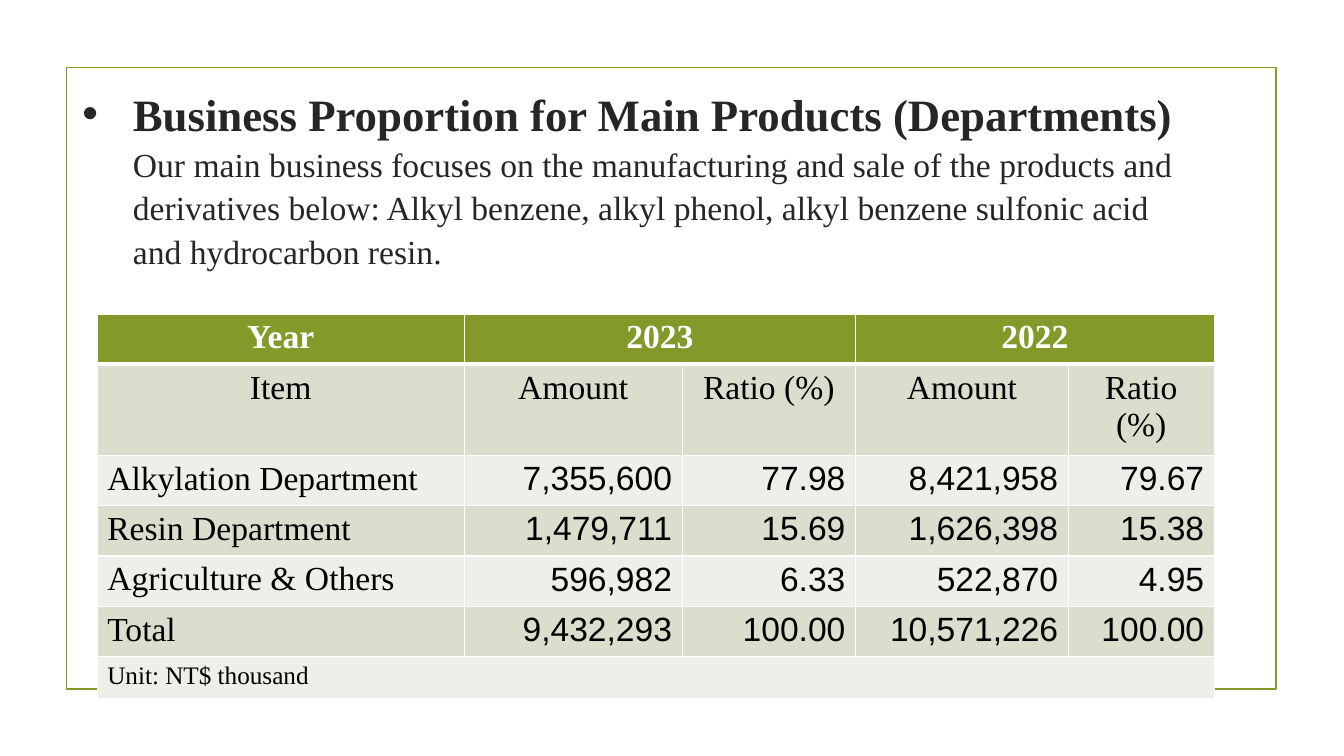
from lxml.etree import SubElement
from pptx import Presentation
from pptx.dml.color import RGBColor
from pptx.enum.shapes import MSO_SHAPE as Shape
from pptx.enum.text import MSO_ANCHOR as Anchor, PP_ALIGN as Align
from pptx.oxml.ns import qn
from pptx.util import Cm, Pt

SERIF, SANS = "Times New Roman", "Arial"
GREEN, WHITE = "83992A", "FFFFFF"


def tint(code):
    return RGBColor.from_string(code)


def put(para, text, size=24, font=SERIF, color="000000", bold=False, align=None):
    run = para.add_run()
    run.text = text
    run.font.size = Pt(size)
    run.font.name = font
    run.font.bold = bold
    run.font.color.rgb = tint(color)
    if align is not None:
        para.alignment = align


deck = Presentation()
deck.slide_width, deck.slide_height = Cm(33.87), Cm(19.05)
slide = deck.slides.add_slide(deck.slide_layouts[6])

# Frame
frame = slide.shapes.add_shape(Shape.RECTANGLE, Cm(1.68), Cm(1.7), Cm(30.48), Cm(15.67))
frame.shadow.inherit = False
frame.fill.background()
frame.line.color.rgb = tint(GREEN)
frame.line.width = Pt(1.25)

# Heading and introduction
box = slide.shapes.add_textbox(Cm(1.83), Cm(0.97), Cm(28.78), Cm(6.96))
frame = box.text_frame
frame.word_wrap = True
frame.vertical_anchor = Anchor.MIDDLE
para = frame.paragraphs[0]
para.line_spacing = 1.08
props = para._p.get_or_add_pPr()
props.set("marL", str(Cm(1.27)))
props.set("indent", str(-Cm(1.27)))
SubElement(props, qn("a:buFont"), typeface=SANS)
SubElement(props, qn("a:buChar"), char="•")
put(para, "Business Proportion for Main Products (Departments)",
    size=32, color="262626", bold=True)
para.add_line_break()
put(para, "Our main business focuses on the manufacturing and sale of the products "
    "and derivatives below: Alkyl benzene, alkyl phenol, alkyl benzene sulfonic "
    "acid and hydrocarbon resin.", color="262626")

# Table grid
rows = [
    ["Year", "2023", "", "2022", ""],
    ["Item", "Amount", "Ratio (%)", "Amount", "Ratio (%)"],
    ["Alkylation Department", "7,355,600", "77.98", "8,421,958", "79.67"],
    ["Resin Department", "1,479,711", "15.69", "1,626,398", "15.38"],
    ["Agriculture & Others", "596,982", "6.33", "522,870", "4.95"],
    ["Total", "9,432,293", "100.00", "10,571,226", "100.00"],
    ["Unit: NT$ thousand", "", "", "", ""],
]
widths = [9.25, 5.49, 4.37, 5.36, 3.68]
last = len(rows) - 1
table = slide.shapes.add_table(len(rows), len(widths), Cm(2.45), Cm(7.91),
                               Cm(sum(widths)), Cm(8.66)).table
for col, width in zip(table.columns, widths):
    col.width = Cm(width)
for r, row in enumerate(table.rows):
    row.height = Cm(1.04 if r == last else 1.27)
for r, left, right in [(0, 1, 2), (0, 3, 4), (last, 0, 4)]:
    table.cell(r, left).merge(table.cell(r, right))

# Cell borders, fills and text
for r, row in enumerate(rows):
    for c, text in enumerate(row):
        cell = table.cell(r, c)
        props = cell._tc.get_or_add_tcPr()
        for side in ("L", "R", "T", "B"):
            thick = (r == 0 and side == "B") or (r == 1 and side == "T")
            line = SubElement(props, qn("a:ln" + side), w=str(Pt(3 if thick else 1)))
            SubElement(SubElement(line, qn("a:solidFill")), qn("a:srgbClr"), val=WHITE)
        cell.fill.solid()
        cell.fill.fore_color.rgb = tint(GREEN if r == 0 else "D9DECD" if r % 2 else "EDEFE8")
        if not text:
            continue
        head = r < 2
        align = Align.CENTER if head else Align.RIGHT if c else Align.LEFT
        put(cell.text_frame.paragraphs[0], text,
            size=18 if r == last else 24,
            font=SANS if c and not head else SERIF,
            color=WHITE if r == 0 else "000000",
            bold=r == 0, align=align)

deck.save("out.pptx")
